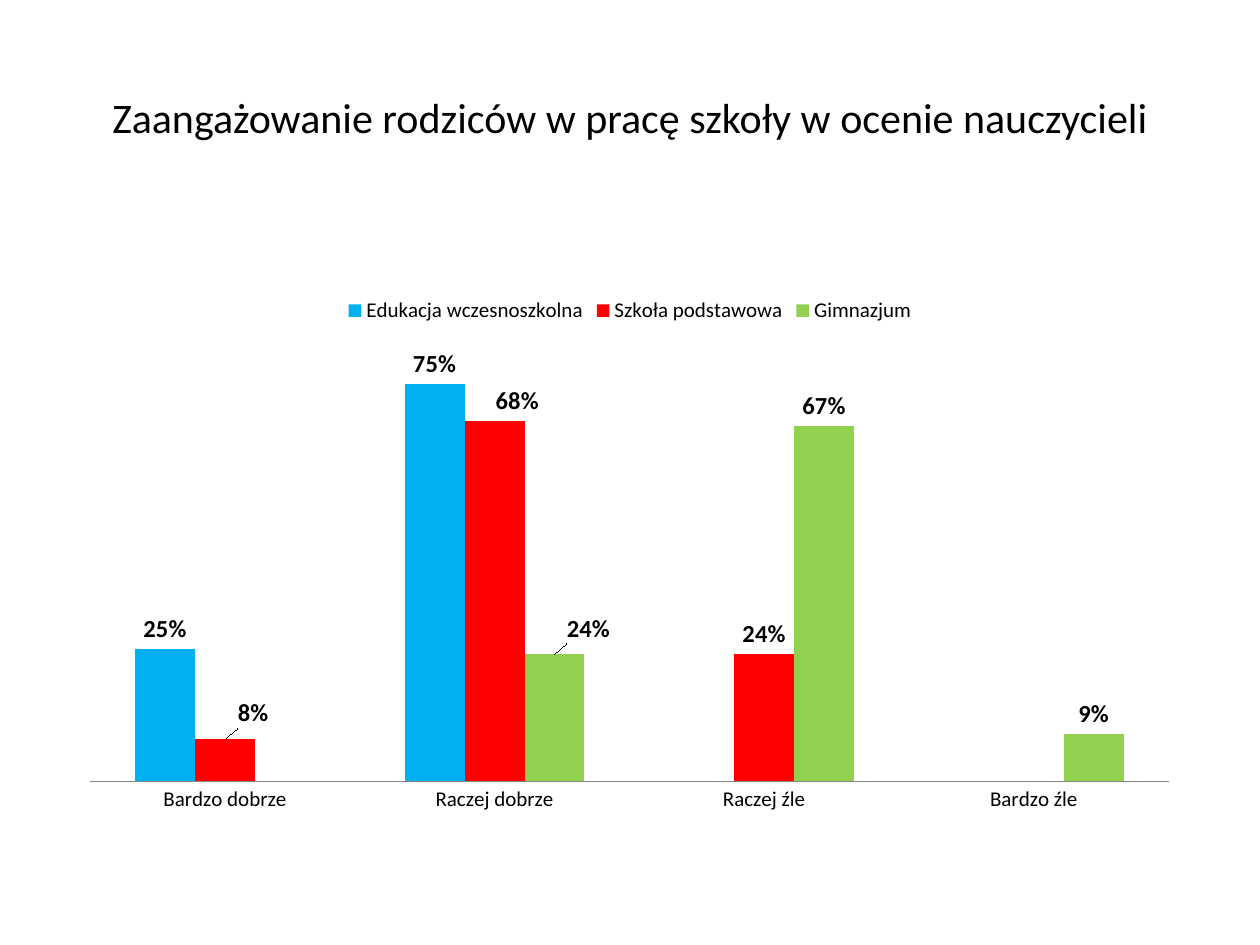
import lxml.etree
import pptx
import pptx.chart.data
import pptx.dml.color
import pptx.enum.chart
import pptx.enum.text
import pptx.oxml.ns
import pptx.util

RGB = pptx.dml.color.RGBColor
BLACK = RGB(0x00, 0x00, 0x00)
GREY = RGB(0x86, 0x86, 0x86)
BLUE = RGB(0x00, 0xB0, 0xF0)
RED = RGB(0xFF, 0x00, 0x00)
GREEN = RGB(0x92, 0xD0, 0x50)
FONT = "Calibri"
SCALE = 914400 / 126

GRADES = ["Bardzo dobrze", "Raczej dobrze", "Raczej źle", "Bardzo źle"]
# Name, colour, values, label shifts by point (share of chart width, height)
GROUPS = [
    ("Edukacja wczesnoszkolna", BLUE, (0.25, 0.75, None, None), {}),
    ("Szkoła podstawowa", RED, (0.08, 0.68, 0.24, None),
     {0: (0.025, -0.01), 1: (0.02, 0)}),
    ("Gimnazjum", GREEN, (None, 0.24, 0.67, 0.09), {1: (0.03, -0.01)}),
]


def px(num):
    return pptx.util.Emu(round(num * SCALE))


def style(font, size, bold=False, color=BLACK):
    font.name = FONT
    font.size = pptx.util.Pt(size)
    font.bold = bold
    font.color.rgb = color


def write(slide, box, text, size=12, bold=False, color=BLACK,
          align=pptx.enum.text.PP_ALIGN.CENTER):
    frame = slide.shapes.add_textbox(*map(px, box)).text_frame
    frame.word_wrap = True
    frame.vertical_anchor = pptx.enum.text.MSO_ANCHOR.MIDDLE
    para = frame.paragraphs[0]
    para.alignment = align
    run = para.add_run()
    run.text = text
    style(run.font, size, bold, color)


def layout(**parts):
    """Make a manual chart layout from its named parts, in schema order."""
    tag = pptx.oxml.ns.qn
    root = lxml.etree.Element(tag("c:layout"))
    manual = lxml.etree.SubElement(root, tag("c:manualLayout"))
    for name, val in parts.items():
        lxml.etree.SubElement(manual, tag("c:" + name)).set("val", str(val))
    return root


def label(chart, num, series, shifts):
    above = pptx.enum.chart.XL_LABEL_POSITION.OUTSIDE_END
    labels = series.data_labels
    labels.show_value = True
    labels.number_format = "0%"
    labels.number_format_is_linked = False
    labels.position = above
    style(labels.font, 14, bold=True)
    for point, (x, y) in shifts.items():
        mark = series.points[point].data_label
        style(mark.font, 14, bold=True)
        mark.position = above
        idx = chart.element.xpath(
            f".//c:ser[c:idx/@val='{num}']//c:dLbl/c:idx[@val='{point}']")[0]
        idx.addnext(layout(x=x, y=y))


def draw_chart(slide, box):
    kinds = pptx.enum.chart
    data = pptx.chart.data.CategoryChartData(number_format="0%")
    data.categories = GRADES
    for name, _, vals, _ in GROUPS:
        data.add_series(name, vals)
    chart = slide.shapes.add_chart(
        kinds.XL_CHART_TYPE.COLUMN_CLUSTERED, *map(px, box), data).chart
    chart.has_title = False
    style(chart.font, 10)

    # Legend
    chart.has_legend = True
    chart.legend.position = kinds.XL_LEGEND_POSITION.TOP
    chart.legend.include_in_layout = False
    style(chart.legend.font, 12)

    # Axes
    value = chart.value_axis
    value.minimum_scale, value.maximum_scale = 0, 0.8
    value.has_major_gridlines = False
    value.visible = False
    grade = chart.category_axis
    grade.major_tick_mark = kinds.XL_TICK_MARK.NONE
    grade.format.line.color.rgb = GREY
    grade.format.line.width = pptx.util.Pt(0.75)
    style(grade.tick_labels.font, 12)

    # Columns and their labels
    plot = chart.plots[0]
    plot.vary_by_categories = False
    plot.gap_width = 150
    plot.overlap = 0
    for num, (series, group) in enumerate(zip(plot.series, GROUPS)):
        series.format.fill.solid()
        series.format.fill.fore_color.rgb = group[1]
        label(chart, num, series, group[3])

    # Plot area
    area = chart.element.xpath(".//c:plotArea")[0]
    for old in area.xpath("./c:layout"):
        area.remove(old)
    area.insert(0, layout(layoutTarget="inner", xMode="edge", yMode="edge",
                          x=0.024, y=0.131, w=0.951, h=0.756))


def main():
    deck = pptx.Presentation()
    deck.slide_width, deck.slide_height = px(1260), px(945)
    slide = deck.slides.add_slide(deck.slide_layouts[6])
    write(slide, (63, 38, 1134, 157),
          "Zaangażowanie rodziców w pracę szkoły w ocenie nauczycieli", size=24)
    draw_chart(slide, (63, 284, 1134, 561))
    deck.save("out.pptx")


if __name__ == "__main__":
    main()
